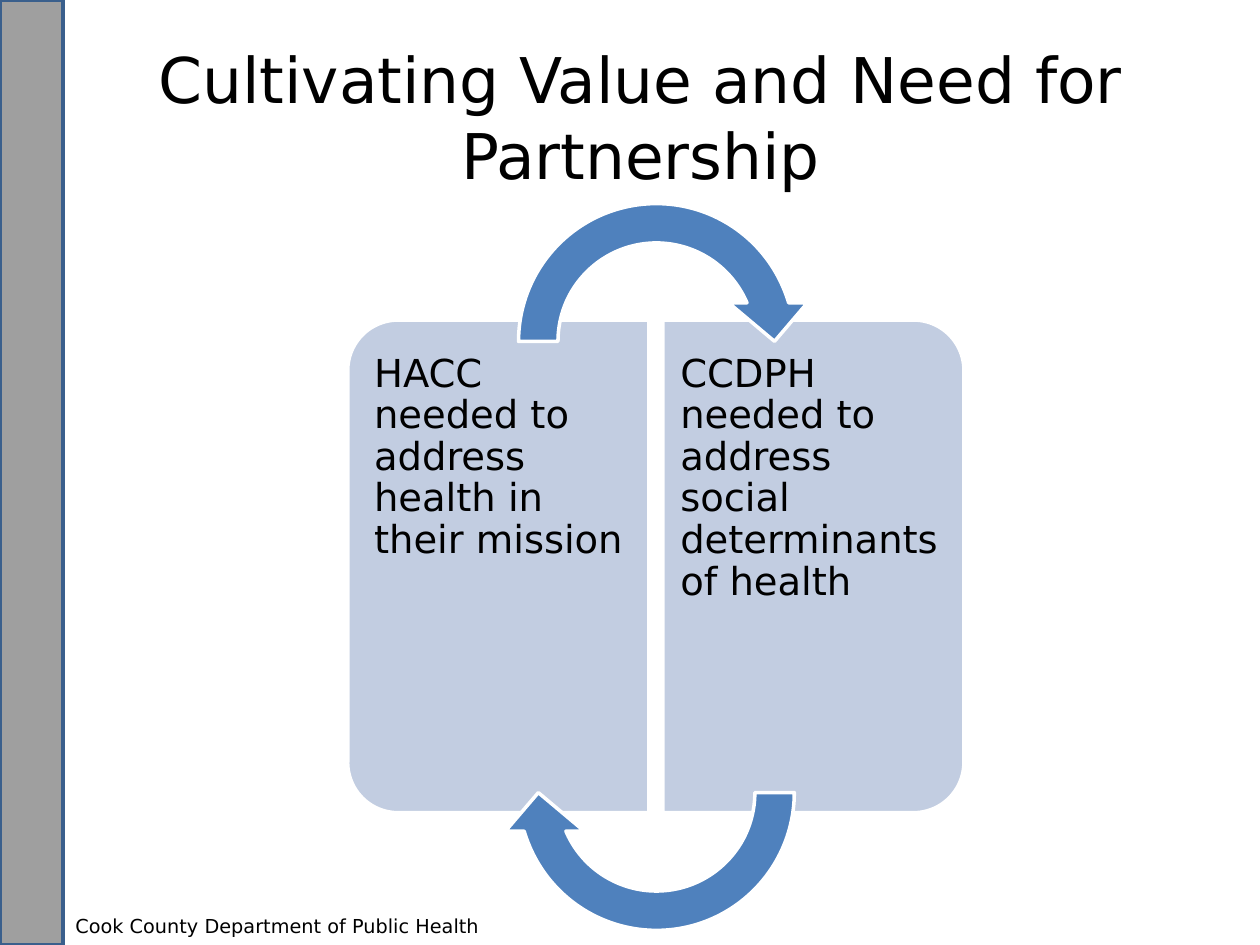
"""Build the slide on cultivating value and need for partnership."""
from lxml import etree
from pptx import Presentation
from pptx.dml.color import RGBColor
from pptx.enum.shapes import MSO_SHAPE
from pptx.enum.text import MSO_ANCHOR, PP_ALIGN
from pptx.oxml.ns import qn
from pptx.util import Inches, Pt

RECT = MSO_SHAPE.RECTANGLE
HALF_PANEL = MSO_SHAPE.ROUND_2_SAME_RECTANGLE
ARROW = MSO_SHAPE.CIRCULAR_ARROW
TOP, MIDDLE = MSO_ANCHOR.TOP, MSO_ANCHOR.MIDDLE
LEFT, CENTER = PP_ALIGN.LEFT, PP_ALIGN.CENTER

BLACK = RGBColor(0x00, 0x00, 0x00)
WHITE = RGBColor(0xFF, 0xFF, 0xFF)
GRAY = RGBColor(0x80, 0x80, 0x80)
NAVY = RGBColor(0x3A, 0x5F, 0x8C)
BLUE = RGBColor(0x4F, 0x81, 0xBD)
PALE = RGBColor(0xC2, 0xCD, 0xE1)
FONT = "DejaVu Sans"

prs = Presentation()
prs.slide_width, prs.slide_height = Inches(10), Inches(7.5)
s = prs.slides.add_slide(prs.slide_layouts[6])


def add_text(text, box, size, align=LEFT, anchor=TOP,
             insets=(0.1, 0.05, 0.1, 0.05), spacing=1.0):
    tf = s.shapes.add_textbox(*map(Inches, box)).text_frame
    tf.word_wrap = True
    tf.vertical_anchor = anchor
    (tf.margin_left, tf.margin_top,
     tf.margin_right, tf.margin_bottom) = map(Inches, insets)
    p = tf.paragraphs[0]
    p.alignment = align
    p.line_spacing = spacing
    r = p.add_run()
    r.text = text
    r.font.name, r.font.size = FONT, Pt(size)
    r.font.color.rgb = BLACK


def add_shape(kind, box, fill, line, rotation=0, adjustments=()):
    sp = s.shapes.add_shape(kind, *map(Inches, box))
    sp.shadow.inherit = False
    sp.fill.solid()
    sp.fill.fore_color.rgb = fill
    sp.line.color.rgb = line
    sp.line.width = Pt(2)
    sp.rotation = rotation
    for i, value in enumerate(adjustments):
        sp.adjustments[i] = value
    return sp


bar = add_shape(RECT, (0, 0, 0.5, 7.5), GRAY, NAVY)
color = bar.fill._xPr.find(qn("a:solidFill"))[0]
etree.SubElement(color, qn("a:alpha"), val="75000")

add_text("Cook County Department of Public Health", (0.5, 7.21, 5.17, 0.29), 11)
add_text("Cultivating Value and Need for Partnership", (0.67, 0.3, 8.83, 1.25),
         36, align=CENTER, anchor=MIDDLE)

panels = [
    ("HACC needed to address health in their mission", 2, 270, 2.88, 0.09, 0.14),
    ("CCDPH needed to address social determinants of health",
     4.5, 90, 5.26, 0.14, 0.04),
]
for text, x, rotation, text_x, inset_left, inset_right in panels:
    add_shape(HALF_PANEL, (x, 3.3, 3.91, 2.39), PALE, WHITE, rotation, (0.167, 0))
    add_text(text, (text_x, 2.66, 2.27, 3.68), 22, spacing=0.9,
             insets=(inset_left, 0.15, inset_right, 0.15))

for y, rotation in ((1.46, 0), (5.04, 180)):
    add_shape(ARROW, (3.96, y, 2.5, 2.5), BLUE, WHITE, rotation,
              (0.125, 11.42, 204.58, 108, 0.125))

prs.save("out.pptx")
